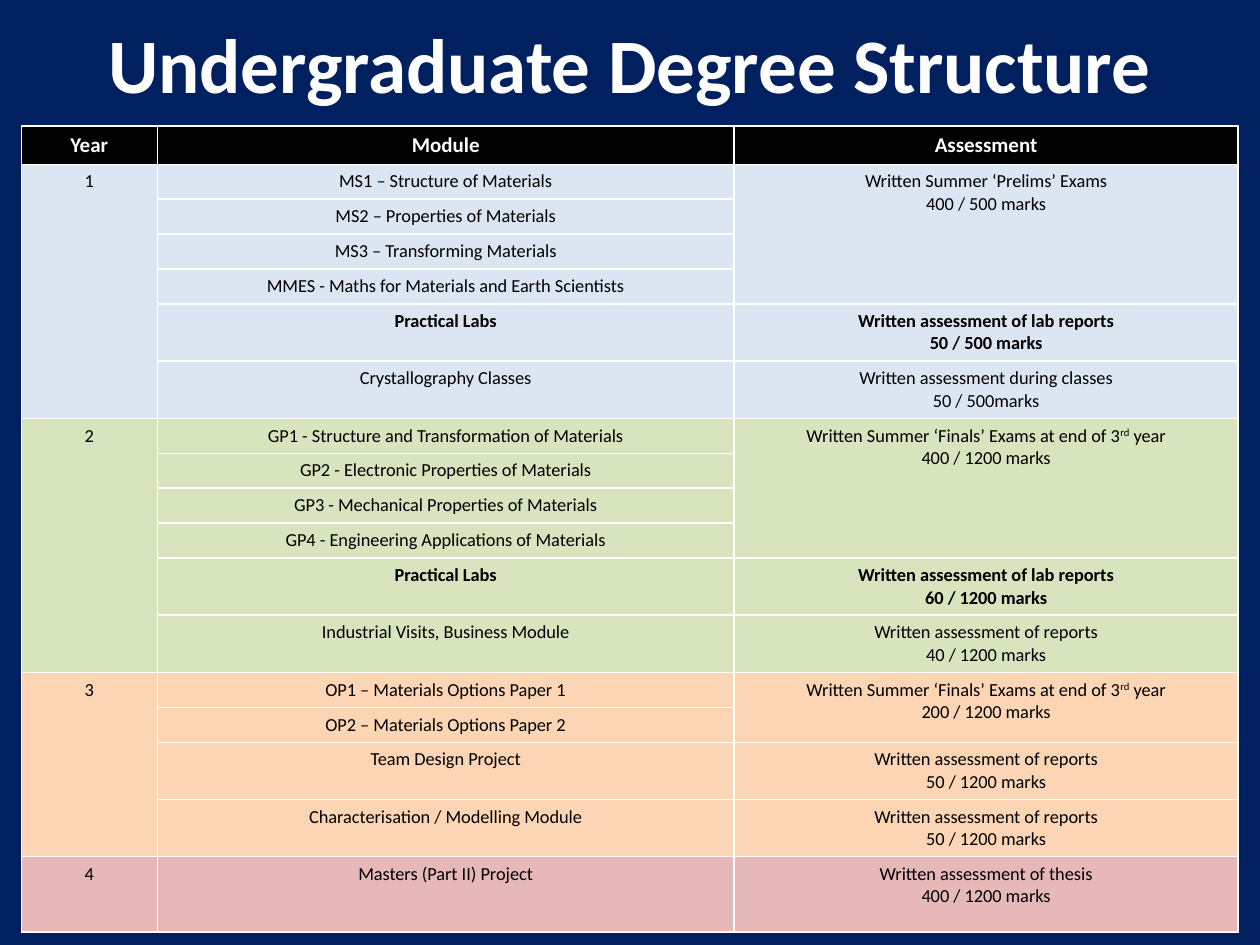
import pptx
import pptx.dml.color
import pptx.enum.text
import pptx.oxml
import pptx.oxml.ns
import pptx.util
from pptx.util import Cm, Pt

FONT = "Calibri"
COLUMN_WIDTHS = [2.74, 11.63, 10.16]
HEADER_HEIGHT, SINGLE_HEIGHT, DOUBLE_HEIGHT, THESIS_HEIGHT = 0.74, 0.66, 1.09, 1.52
HEADINGS = ["Year", "Module", "Assessment"]
FINALS = "Written Summer ‘Finals’ Exams at end of 3^rd^ year"
LABS = "Written assessment of lab reports"
REPORTS = "Written assessment of reports"

# Each year: fill colour, then groups of (modules, assessment, marks).
YEARS = [
    ("DCE6F2", [
        (["MS1 – Structure of Materials", "MS2 – Properties of Materials",
          "MS3 – Transforming Materials",
          "MMES - Maths for Materials and Earth Scientists"],
         "Written Summer ‘Prelims’ Exams", "400 / 500 marks"),
        (["Practical Labs"], LABS, "50 / 500 marks"),
        (["Crystallography Classes"],
         "Written assessment during classes", "50 / 500marks"),
    ]),
    ("D7E4BD", [
        (["GP1 - Structure and Transformation of Materials",
          "GP2 - Electronic Properties of Materials",
          "GP3 - Mechanical Properties of Materials",
          "GP4 - Engineering Applications of Materials"],
         FINALS, "400 / 1200 marks"),
        (["Practical Labs"], LABS, "60 / 1200 marks"),
        (["Industrial Visits, Business Module"], REPORTS, "40 / 1200 marks"),
    ]),
    ("FCD5B5", [
        (["OP1 – Materials Options Paper 1", "OP2 – Materials Options Paper 2"],
         FINALS, "200 / 1200 marks"),
        (["Team Design Project"], REPORTS, "50 / 1200 marks"),
        (["Characterisation / Modelling Module"], REPORTS, "50 / 1200 marks"),
    ]),
    ("E6B9B8", [
        (["Masters (Part II) Project"],
         "Written assessment of thesis", "400 / 1200 marks"),
    ]),
]


def color(hex_string):
    return pptx.dml.color.RGBColor.from_string(hex_string)


def write_lines(text_frame, lines, size, text_color, bold):
    """Write one centred paragraph per line; text between carets is superscript."""
    font_format = {"name": FONT, "size": Pt(size), "bold": bold}
    text_frame.vertical_anchor = pptx.enum.text.MSO_ANCHOR.MIDDLE
    for index, line in enumerate(lines):
        paragraph = text_frame.add_paragraph() if index else text_frame.paragraphs[0]
        paragraph.alignment = pptx.enum.text.PP_ALIGN.CENTER
        for part_index, part in enumerate(line.split("^")):
            run = paragraph.add_run()
            run.text = part
            for name, value in font_format.items():
                setattr(run.font, name, value)
            run.font.color.rgb = color(text_color)
            if part_index % 2:
                run.font._element.set("baseline", "30000")


def style_cell(cell, fill_color):
    """Add white borders on all four sides, then the fill."""
    properties = cell._tc.get_or_add_tcPr()
    for side in ("lnL", "lnR", "lnT", "lnB"):
        properties.append(pptx.oxml.parse_xml(
            f'<a:{side} {pptx.oxml.ns.nsdecls("a")} w="12700"><a:solidFill>'
            f'<a:srgbClr val="FFFFFF"/></a:solidFill></a:{side}>'))
    cell.fill.solid()
    cell.fill.fore_color.rgb = color(fill_color)


def add_title(slide):
    title = slide.shapes.title
    placement = {"left": Cm(1.27), "top": Cm(0), "width": Cm(22.86), "height": Cm(2.54)}
    for name, value in placement.items():
        setattr(title, name, value)
    write_lines(title.text_frame, ["Undergraduate Degree Structure"], 44, "FFFFFF", True)


def fill_span(table, first_row, row_count, column, lines, bold=False):
    cell = table.cell(first_row, column)
    if row_count > 1:
        cell.merge(table.cell(first_row + row_count - 1, column))
    write_lines(cell.text_frame, lines, 10.5, "000000", bold)


def fill_year(table, first_row, year, fill_color, groups):
    """Fill the rows of one year and return the row after them."""
    row = first_row
    for modules, assessment, marks in groups:
        bold = modules == ["Practical Labs"]
        fill_span(table, row, len(modules), 2, [assessment, marks], bold)
        for module in modules:
            fill_span(table, row, 1, 1, [module], bold)
            for column in range(len(HEADINGS)):
                style_cell(table.cell(row, column), fill_color)
            row += 1
    fill_span(table, first_row, row - first_row, 0, [str(year)])
    return row


def add_degree_table(slide):
    heights = [HEADER_HEIGHT]
    for _, groups in YEARS:
        for modules, _, _ in groups:
            height = DOUBLE_HEIGHT if len(modules) == 1 else SINGLE_HEIGHT
            heights += [height] * len(modules)
    heights[-1] = THESIS_HEIGHT
    table = slide.shapes.add_table(
        len(heights), len(HEADINGS), Cm(0.43), Cm(2.54),
        Cm(sum(COLUMN_WIDTHS)), Cm(sum(heights))).table
    for column, width in zip(table.columns, COLUMN_WIDTHS):
        column.width = Cm(width)
    for row, height in zip(table.rows, heights):
        row.height = Cm(height)
    for column, heading in enumerate(HEADINGS):
        cell = table.cell(0, column)
        style_cell(cell, "000000")
        write_lines(cell.text_frame, [heading], 12, "FFFFFF", True)
    next_row = 1
    for year, (fill_color, groups) in enumerate(YEARS, start=1):
        next_row = fill_year(table, next_row, year, fill_color, groups)


def main():
    presentation = pptx.Presentation()
    presentation.slide_width, presentation.slide_height = Cm(25.4), Cm(19.05)
    slide = presentation.slides.add_slide(presentation.slide_layouts[5])
    slide.background.fill.solid()
    slide.background.fill.fore_color.rgb = color("002060")
    add_title(slide)
    add_degree_table(slide)
    presentation.save("out.pptx")


if __name__ == "__main__":
    main()
